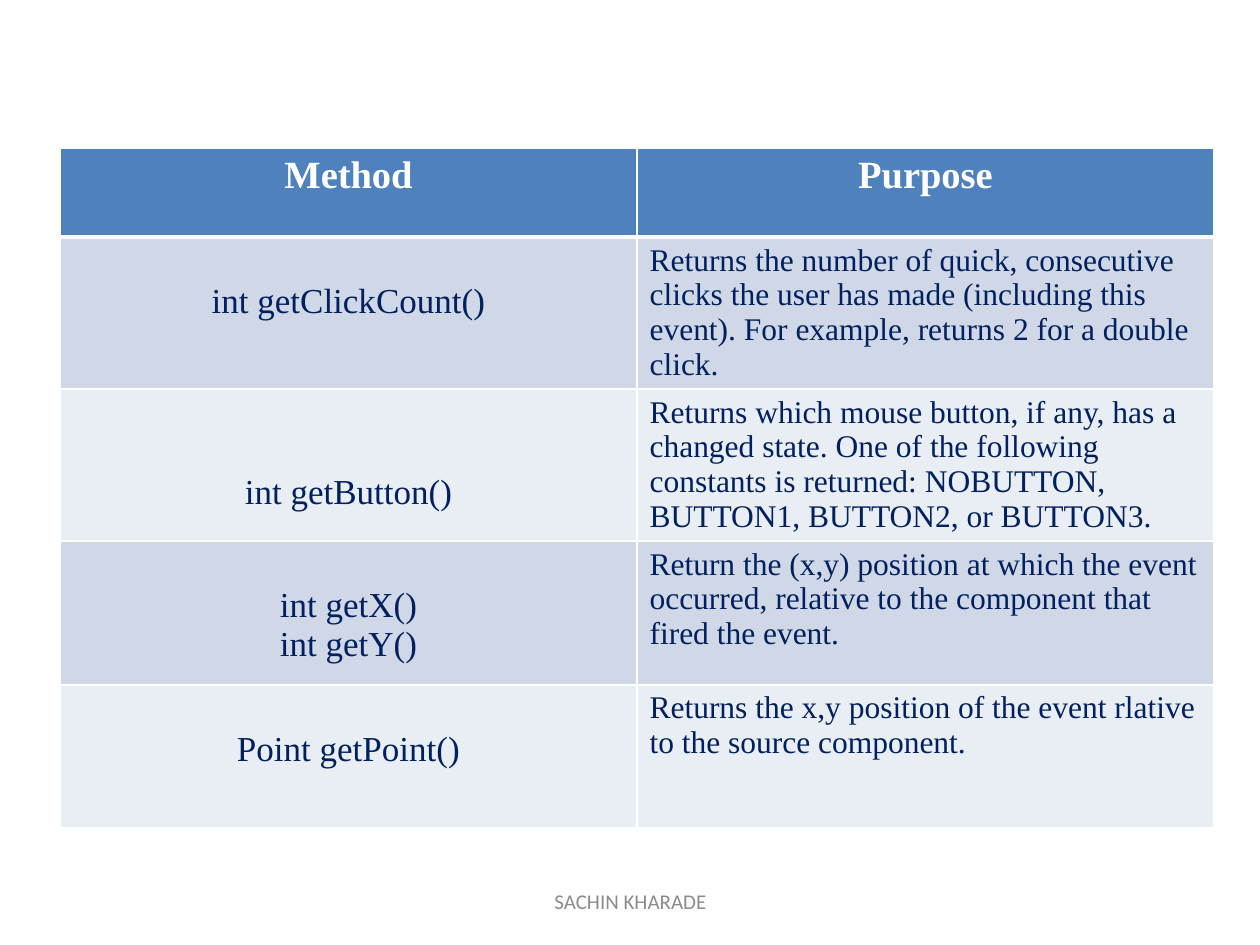
import dataclasses

import pptx
import pptx.dml.color
import pptx.enum.text
import pptx.oxml.ns
import pptx.util
from lxml import etree

PX = pptx.util.Inches(1) / 126
ALIGN = pptx.enum.text.PP_ALIGN
ANCHOR = pptx.enum.text.MSO_ANCHOR


@dataclasses.dataclass(frozen=True)
class Theme:
    table_font: str = "Times New Roman"
    footer_font: str = "Calibri"
    white: str = "FFFFFF"
    header: str = "4F81BD"
    bands: tuple = ("D0D8E8", "E9EDF4")
    ink: str = "002060"
    muted: str = "8C8C8C"
    header_size: int = 22
    method_size: int = 20
    purpose_size: int = 18
    footer_size: int = 12
    border: int = 1
    header_rule: int = 3


THEME = Theme()
TABLE_BOX = (60, 148, 1154, 680)
FOOTER_BOX = (431, 876, 399, 50)
ROW_HEIGHTS = (89, 152, 152, 144, 143)
CELL_MARGIN = 6
METHOD_LINE = 39

# Method lines, number of lines they are lowered by, purpose
METHODS = (
    (("int getClickCount()",), 1,
     "Returns the number of quick, consecutive clicks the user has made "
     "(including this event). For example, returns 2 for a double click."),
    (("int getButton()",), 2,
     "Returns which mouse button, if any, has a changed state. One of the "
     "following constants is returned: NOBUTTON, BUTTON1, BUTTON2, or BUTTON3."),
    (("int getX()", "int getY()"), 1,
     "Return the (x,y) position at which the event occurred, relative to the "
     "component that fired the event."),
    (("Point getPoint()",), 1,
     "Returns the x,y position of the event rlative to the source component."),
)


def px(length):
    return pptx.util.Emu(round(length * PX))


def rgb(color):
    return pptx.dml.color.RGBColor.from_string(color)


def write(frame, lines, font, size, color, align=ALIGN.CENTER, bold=False):
    """Write the lines as one paragraph with line breaks."""
    frame.word_wrap = True
    para = frame.paragraphs[0]
    para.alignment = align
    for index, line in enumerate(lines):
        if index:
            para.add_line_break()
        span = para.add_run()
        span.text = line
        span.font.name = font
        span.font.size = pptx.util.Pt(size)
        span.font.bold = bold
        span.font.color.rgb = rgb(color)


def style_cell(cell, fill, bottom=THEME.border):
    """Set the borders and the fill of a cell."""
    properties = cell._tc.get_or_add_tcPr()
    qn = pptx.oxml.ns.qn
    for side in "LRTB":
        points = bottom if side == "B" else THEME.border
        line = etree.SubElement(properties, qn(f"a:ln{side}"), w=str(pptx.util.Pt(points)))
        solid = etree.SubElement(line, qn("a:solidFill"))
        etree.SubElement(solid, qn("a:srgbClr"), val=THEME.white)
    cell.fill.solid()
    cell.fill.fore_color.rgb = rgb(fill)
    cell.margin_top = cell.margin_bottom = px(CELL_MARGIN)


def add_method_table(page, box):
    table = page.shapes.add_table(len(METHODS) + 1, 2, *map(px, box)).table
    for column in table.columns:
        column.width = px(box[2] / 2)
    for row, height in zip(table.rows, ROW_HEIGHTS):
        row.height = px(height)

    for column, heading in enumerate(("Method", "Purpose")):
        cell = table.cell(0, column)
        style_cell(cell, THEME.header, THEME.header_rule)
        write(cell.text_frame, [heading], THEME.table_font, THEME.header_size,
              THEME.white, bold=True)

    for row, (methods, lowered, purpose) in enumerate(METHODS, 1):
        method_cell, purpose_cell = table.cell(row, 0), table.cell(row, 1)
        for cell in (method_cell, purpose_cell):
            style_cell(cell, THEME.bands[(row - 1) % 2])
        method_cell.margin_top = px(CELL_MARGIN + lowered * METHOD_LINE)
        write(method_cell.text_frame, methods, THEME.table_font,
              THEME.method_size, THEME.ink)
        write(purpose_cell.text_frame, [purpose], THEME.table_font,
              THEME.purpose_size, THEME.ink, ALIGN.LEFT)


def add_footer(page, box):
    frame = page.shapes.add_textbox(*map(px, box)).text_frame
    frame.vertical_anchor = ANCHOR.MIDDLE
    write(frame, ["SACHIN KHARADE"], THEME.footer_font, THEME.footer_size, THEME.muted)


def main():
    deck = pptx.Presentation()
    deck.slide_width, deck.slide_height = px(1260), px(945)
    page = deck.slides.add_slide(deck.slide_layouts[6])
    add_method_table(page, TABLE_BOX)
    add_footer(page, FOOTER_BOX)
    deck.save("out.pptx")


if __name__ == "__main__":
    main()
